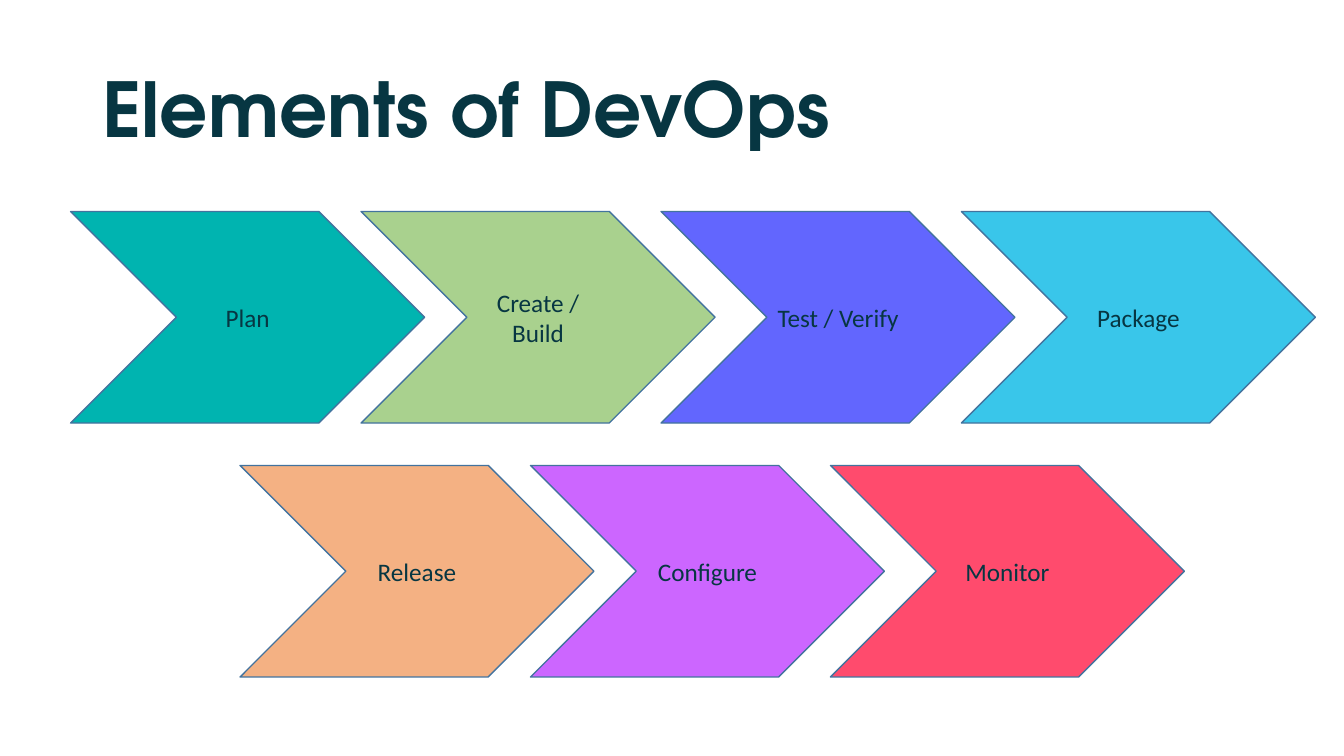
from dataclasses import dataclass

from pptx import Presentation
from pptx.dml.color import RGBColor as Rgb
from pptx.enum.shapes import MSO_SHAPE as Shape
from pptx.enum.text import MSO_ANCHOR as Anchor, PP_ALIGN as Align
from pptx.util import Cm, Pt


@dataclass(frozen=True)
class Theme:
    ink: str = "073642"
    edge: str = "43739E"
    teal: str = "00B4B0"
    green: str = "A9D18E"
    blue: str = "6266FE"
    sky: str = "39C6EA"
    peach: str = "F4B183"
    violet: str = "CC66FF"
    red: str = "FF4B6D"
    head: int = 54
    label: int = 18
    display: str = "TeX Gyre Adventor"
    text: str = "Calibri"


THEME = Theme()
WIDE, HIGH = 8.92, 5.33
STEPS = (0, 7.32, 14.88, 22.45)
ROWS = (
    (1.78, 5.33, (
        ("Plan", THEME.teal),
        ("Create / Build", THEME.green),
        ("Test / Verify", THEME.blue),
        ("Package", THEME.sky),
    )),
    (6.05, 11.73, (
        ("Release", THEME.peach),
        ("Configure", THEME.violet),
        ("Monitor", THEME.red),
    )),
)


def write(shape, text, *, font, size, bold=False, align=Align.LEFT, space=1.0):
    frame = shape.text_frame
    frame.word_wrap = True
    frame.vertical_anchor = Anchor.MIDDLE
    para = frame.paragraphs[0]
    para.alignment = align
    para.line_spacing = space
    run = para.add_run()
    run.text = text
    run.font.name = font
    run.font.size = Pt(size)
    run.font.bold = bold
    run.font.color.rgb = Rgb.from_string(THEME.ink)


def add_title(slide, text):
    title = slide.shapes.title
    title.left, title.top = Cm(2.33), Cm(1.01)
    title.width, title.height = Cm(29.21), Cm(3.68)
    write(title, text, font=THEME.display, size=THEME.head, bold=True, space=0.9)


def add_stage(slide, text, fill, left, top):
    stage = slide.shapes.add_shape(
        Shape.CHEVRON, Cm(left), Cm(top), Cm(WIDE), Cm(HIGH))
    stage.shadow.inherit = False
    stage.fill.solid()
    stage.fill.fore_color.rgb = Rgb.from_string(fill)
    stage.line.color.rgb = Rgb.from_string(THEME.edge)
    stage.line.width = Pt(1)
    write(stage, text, font=THEME.text, size=THEME.label, align=Align.CENTER)


def main():
    deck = Presentation()
    deck.slide_width, deck.slide_height = Cm(33.87), Cm(19.05)
    slide = deck.slides.add_slide(deck.slide_layouts[5])
    add_title(slide, "Elements of DevOps")
    for left, top, stages in ROWS:
        for step, (text, fill) in zip(STEPS, stages):
            add_stage(slide, text, fill, left + step, top)
    deck.save("out.pptx")


if __name__ == "__main__":
    main()
